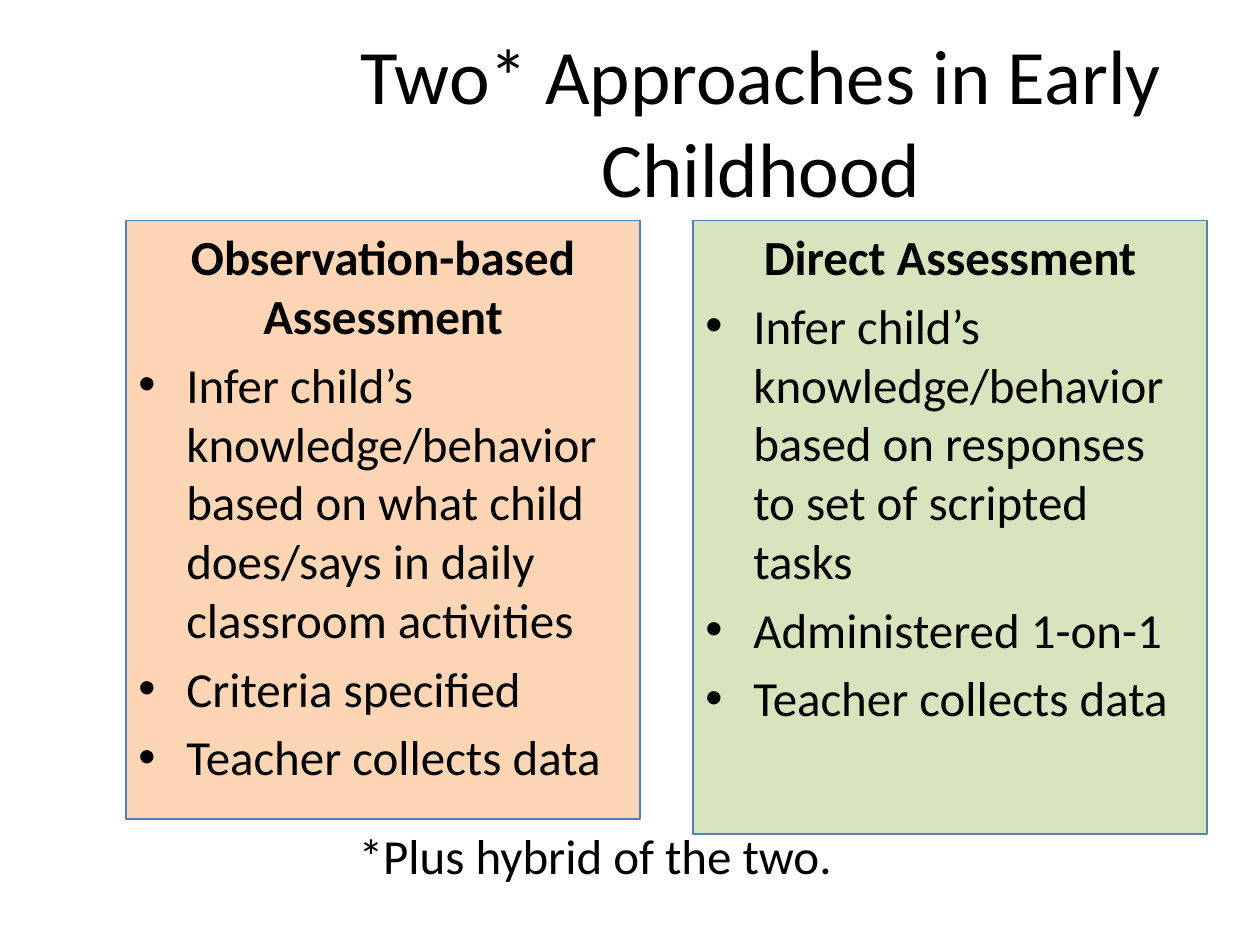
"""Build a slide that compares two approaches to early childhood assessment."""
from dataclasses import dataclass

from lxml import etree
from pptx import Presentation
from pptx.dml.color import RGBColor
from pptx.enum.shapes import MSO_SHAPE
from pptx.enum.text import MSO_ANCHOR, MSO_AUTO_SIZE, PP_ALIGN
from pptx.oxml.ns import qn
from pptx.util import Inches, Pt

RECT = MSO_SHAPE.RECTANGLE
TOP, MIDDLE = MSO_ANCHOR.TOP, MSO_ANCHOR.MIDDLE
LEFT, CENTER = PP_ALIGN.LEFT, PP_ALIGN.CENTER
GROW = MSO_AUTO_SIZE.SHAPE_TO_FIT_TEXT


@dataclass(frozen=True)
class Theme:
    """Hold the colours and type of the slide."""
    font: str = "Calibri"
    title: int = 44
    body: int = 28
    gap: float = 5.6
    ink: str = "000000"
    edge: str = "4F81BD"
    peach: str = "FCD5B5"
    green: str = "D7E4BD"


THEME = Theme()
PANELS = [
    (1, 4.75, THEME.peach, "Observation-based Assessment", [
        "Infer child’s knowledge/behavior based on what child does/says "
        "in daily classroom activities",
        "Criteria specified",
        "Teacher collects data",
    ]),
    (5.5, 4.87, THEME.green, "Direct Assessment", [
        "Infer child’s knowledge/behavior based on responses to set of "
        "scripted tasks",
        "Administered 1-on-1",
        "Teacher collects data",
    ]),
]


def write(para, text, size, align=LEFT, bold=False):
    """Fill and style one paragraph."""
    para.text = text
    para.alignment = align
    font = para.font
    font.name, font.size, font.bold = THEME.font, Pt(size), bold
    font.color.rgb = RGBColor.from_string(THEME.ink)


def add_bullet(para):
    """Give a paragraph a round bullet and a hanging indent."""
    props = para._p.get_or_add_pPr()
    indent = Inches(0.38)
    props.set("marL", str(indent))
    props.set("indent", str(-indent))
    etree.SubElement(props, qn("a:buFont")).set("typeface", "Arial")
    etree.SubElement(props, qn("a:buChar")).set("char", "•")


def add_text(slide, box, text, size, align=LEFT, anchor=TOP):
    """Add a wrapped text box and return its frame."""
    frame = slide.shapes.add_textbox(*map(Inches, box)).text_frame
    frame.word_wrap = True
    frame.vertical_anchor = anchor
    write(frame.paragraphs[0], text, size, align)
    return frame


def add_panel(slide, left, height, fill, head, items):
    """Add a filled panel with a heading and bullets."""
    shape = slide.shapes.add_shape(
        RECT, *map(Inches, (left, 1.75, 4.08, height)))
    shape.shadow.inherit = False
    shape.fill.solid()
    shape.fill.fore_color.rgb = RGBColor.from_string(fill)
    shape.line.color.rgb = RGBColor.from_string(THEME.edge)
    shape.line.width = Pt(0.75)
    frame = shape.text_frame
    frame.word_wrap = True
    frame.vertical_anchor = TOP
    write(frame.paragraphs[0], head, THEME.body, CENTER, True)
    for item in items:
        para = frame.add_paragraph()
        add_bullet(para)
        para.space_before = Pt(THEME.gap)
        write(para, item, THEME.body)


def main():
    """Build and save the slide."""
    deck = Presentation()
    deck.slide_width, deck.slide_height = Inches(10), Inches(7.5)
    slide = deck.slides.add_slide(deck.slide_layouts[6])
    add_text(slide, (2.5, 0.33, 7.08, 1.25),
             "Two* Approaches in Early Childhood",
             THEME.title, CENTER, MIDDLE)
    for panel in PANELS:
        add_panel(slide, *panel)
    note = add_text(slide, (2.75, 6.5, 5.5, 0.57),
                    "*Plus hybrid of the two.", THEME.body)
    note.auto_size = GROW
    deck.save("out.pptx")


if __name__ == "__main__":
    main()
